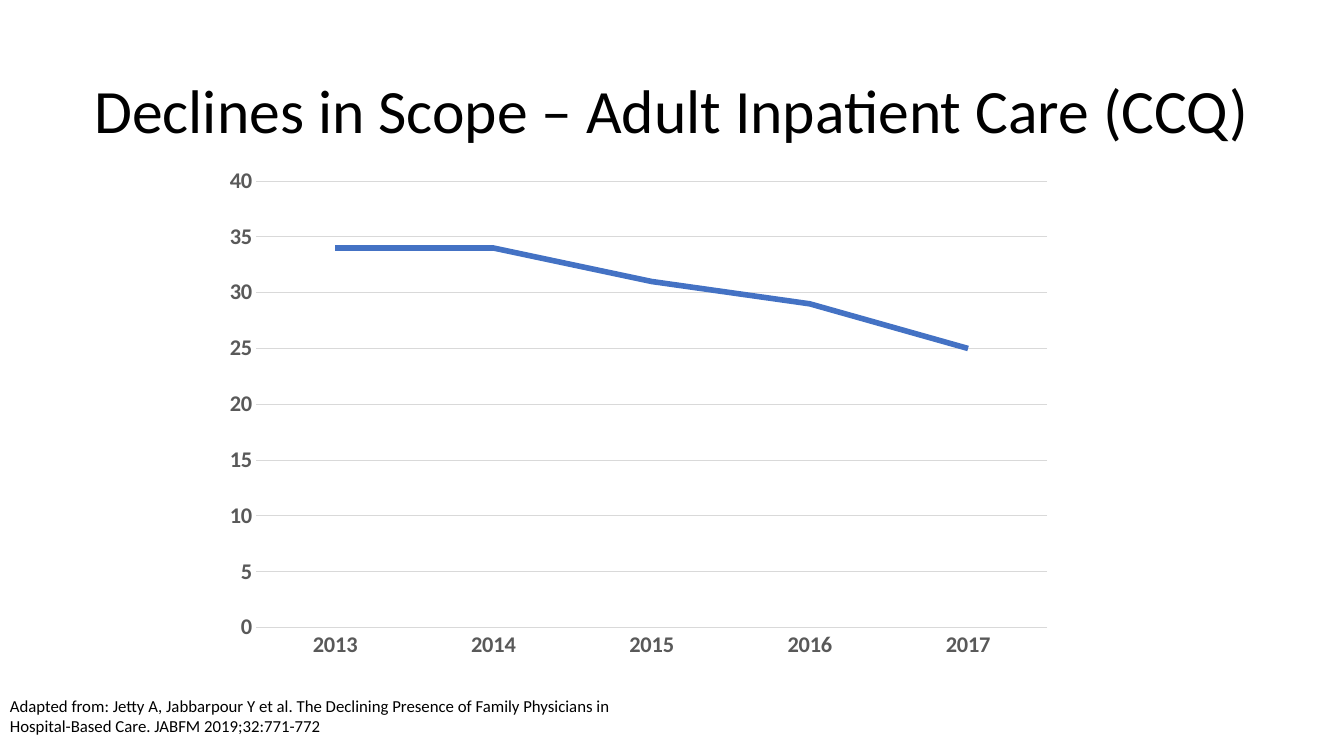
import pptx
import pptx.chart.data
import pptx.dml.color
import pptx.enum.chart
import pptx.enum.text
import pptx.util
from pptx.util import Cm

FONT = "Calibri"
BLACK, GREY, GRID, BLUE = "000000", "595959", "D9D9D9", "4472C4"
YEARS = ["2013", "2014", "2015", "2016", "2017"]
SHARES = [34, 34, 31, 29, 25]


def rgb(color):
    return pptx.dml.color.RGBColor.from_string(color)


def style_font(font, size, color, bold=False):
    font.name = FONT
    font.size = pptx.util.Pt(size)
    font.bold = bold
    font.color.rgb = rgb(color)


def style_line(line, color, width):
    line.color.rgb = rgb(color)
    line.width = pptx.util.Pt(width)


def add_text(slide, box, lines, size, align, anchor, spacing=1.0):
    tf = slide.shapes.add_textbox(*box).text_frame
    tf.word_wrap = True
    tf.vertical_anchor = anchor
    for i, line in enumerate(lines):
        p = tf.add_paragraph() if i else tf.paragraphs[0]
        p.alignment = align
        p.line_spacing = spacing
        r = p.add_run()
        r.text = line
        style_font(r.font, size, BLACK)


def style_axis(axis):
    axis.major_tick_mark = pptx.enum.chart.XL_TICK_MARK.NONE
    axis.minor_tick_mark = pptx.enum.chart.XL_TICK_MARK.NONE
    style_font(axis.tick_labels.font, 16, GREY, bold=True)


def add_line_chart(slide, box, categories, values):
    data = pptx.chart.data.CategoryChartData()
    data.categories = categories
    data.add_series("Series 1", values)
    chart = slide.shapes.add_chart(
        pptx.enum.chart.XL_CHART_TYPE.LINE, *box, data).chart
    style_font(chart.font, 10, BLACK)
    chart.has_title = False
    chart.has_legend = False

    # Axes and gridlines
    style_axis(chart.category_axis)
    style_line(chart.category_axis.format.line, GRID, 0.75)
    axis = chart.value_axis
    style_axis(axis)
    axis.minimum_scale, axis.maximum_scale, axis.major_unit = 0, 40, 5
    axis.format.line.fill.background()
    axis.has_major_gridlines = True
    style_line(axis.major_gridlines.format.line, GRID, 0.75)

    # Series
    plot = chart.plots[0]
    plot.vary_by_categories = False
    series = plot.series[0]
    series.smooth = False
    series.marker.style = pptx.enum.chart.XL_MARKER_STYLE.NONE
    style_line(series.format.line, BLUE, 4)


def main():
    prs = pptx.Presentation()
    prs.slide_width, prs.slide_height = Cm(33.87), Cm(19.05)
    slide = prs.slides.add_slide(prs.slide_layouts[6])
    align = pptx.enum.text.PP_ALIGN
    anchor = pptx.enum.text.MSO_ANCHOR

    # Title
    add_text(slide, (Cm(0), Cm(1.02), prs.slide_width, Cm(3.68)),
             ["Declines in Scope – Adult Inpatient Care (CCQ)"],
             44, align.CENTER, anchor.MIDDLE, 0.9)

    # Source reference
    add_text(slide, (Cm(0), Cm(17.4), Cm(16.08), Cm(1.27)),
             ["Adapted from: Jetty A, Jabbarpour Y et al. "
              "The Declining Presence of Family Physicians in",
              "Hospital-Based Care. JABFM 2019;32:771-772"],
             12, align.LEFT, anchor.TOP)

    # Chart
    add_line_chart(slide, (Cm(5.36), Cm(3.96), Cm(21.46), Cm(12.9)),
                   YEARS, SHARES)

    prs.save("out.pptx")


if __name__ == "__main__":
    main()
